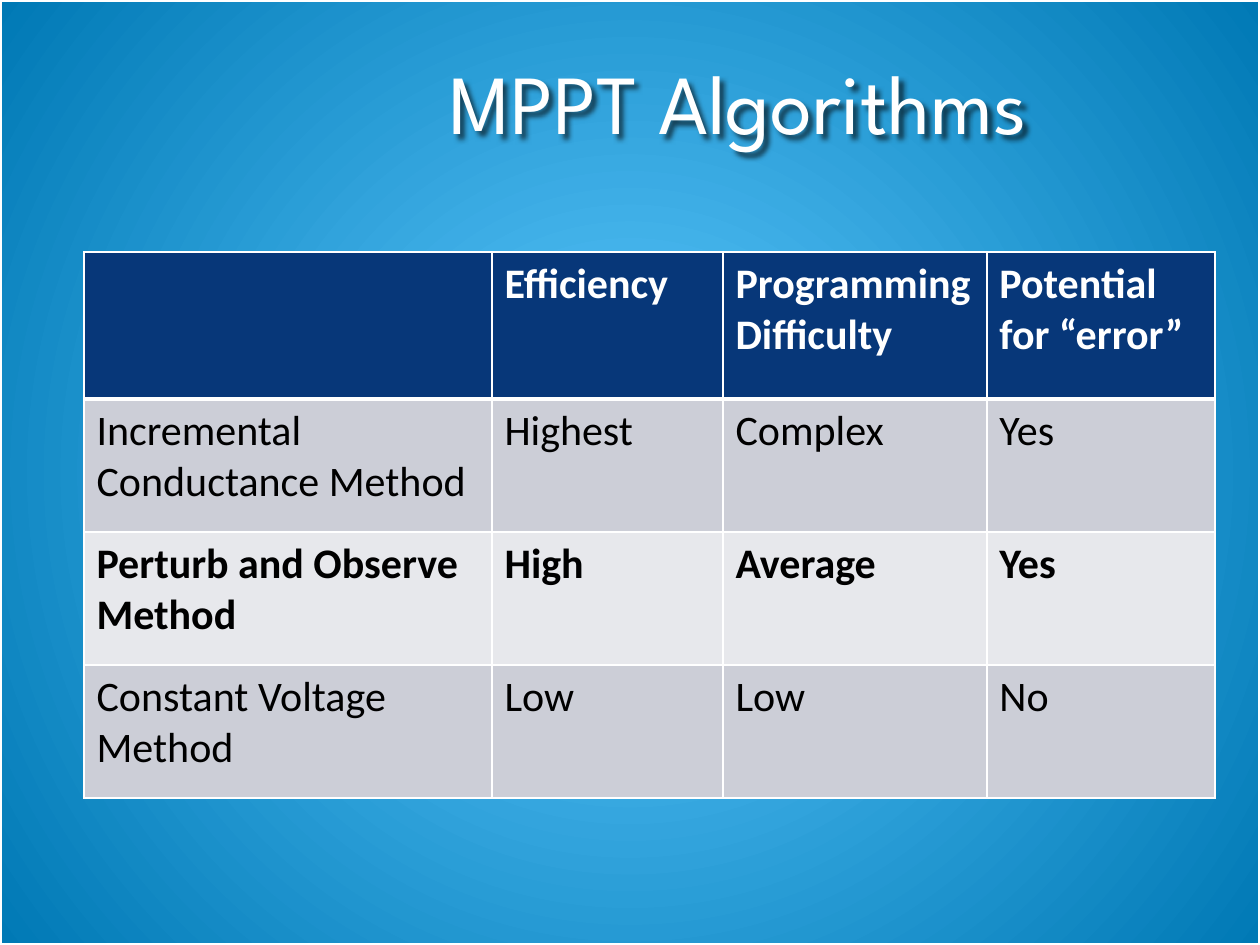
from lxml import etree
from pptx import Presentation
from pptx.dml.color import RGBColor
from pptx.enum.shapes import MSO_SHAPE
from pptx.enum.text import MSO_ANCHOR, MSO_AUTO_SIZE, PP_ALIGN
from pptx.oxml import parse_xml
from pptx.oxml.ns import nsdecls, qn
from pptx.util import Pt

PX = 914400 // 126
WIDTH, HEIGHT = 1260, 945

WHITE = RGBColor(0xFF, 0xFF, 0xFF)
BLACK = RGBColor(0x00, 0x00, 0x00)
SKY = RGBColor(0x5D, 0xC9, 0xFF)
OCEAN = RGBColor(0x00, 0x79, 0xB5)
NAVY = RGBColor(0x07, 0x37, 0x79)
GRAY = RGBColor(0xCC, 0xCE, 0xD7)
PALE = RGBColor(0xE7, 0xE8, 0xEC)

COL_WIDTHS = [408, 231, 264, 228]
ROW_HEIGHTS = [147, 133, 133, 133]
ROWS = [
    ["", "Efficiency", "Programming Difficulty", "Potential for “error”"],
    ["Incremental Conductance Method", "Highest", "Complex", "Yes"],
    ["Perturb and Observe Method", "High", "Average", "Yes"],
    ["Constant Voltage Method", "Low", "Low", "No"],
]
ROW_STYLES = [
    (NAVY, WHITE, True),
    (GRAY, BLACK, False),
    (PALE, BLACK, True),
    (GRAY, BLACK, False),
]


def px(*values):
    return [v * PX for v in values]


def write(tf, text, *, font="Calibri", size=24, color=BLACK, bold=False,
          align=PP_ALIGN.LEFT):
    tf.word_wrap = True
    p = tf.paragraphs[0]
    p.alignment = align
    r = p.add_run()
    r.text = text
    r.font.name = font
    r.font.size = Pt(size)
    r.font.bold = bold
    r.font.color.rgb = color


def set_background(slide):
    fill = slide.background.fill
    fill.gradient()
    for stop, color in zip(fill.gradient_stops, (SKY, OCEAN)):
        stop.color.rgb = color
    lin = next(slide.background._cSld.iter(qn("a:lin")))
    lin.getparent().replace(lin, parse_xml(
        f'<a:path {nsdecls("a")} path="circle">'
        '<a:fillToRect l="50000" t="50000" r="50000" b="50000"/></a:path>'))


def add_frame(slide):
    sp = slide.shapes.add_shape(MSO_SHAPE.RECTANGLE, *px(0, 0, WIDTH, HEIGHT))
    sp.shadow.inherit = False
    sp.fill.background()
    sp.line.color.rgb = WHITE
    sp.line.width = Pt(2)
    slide.shapes._spTree.insert(2, sp._element)


def set_title(slide, text):
    sp = slide.shapes.title
    sp.left, sp.top, sp.width, sp.height = px(283, 43, 911, 115)
    tf = sp.text_frame
    tf.auto_size = MSO_AUTO_SIZE.NONE
    tf.vertical_anchor = MSO_ANCHOR.BOTTOM
    write(tf, text, font="League Spartan", size=48, color=WHITE,
          align=PP_ALIGN.CENTER)
    sp._element.spPr.append(parse_xml(
        f'<a:effectLst {nsdecls("a")}>'
        '<a:outerShdw blurRad="38100" dist="38100" dir="2700000">'
        '<a:srgbClr val="000000"><a:alpha val="60000"/></a:srgbClr>'
        '</a:outerShdw></a:effectLst>'))


def set_borders(cell, top, bottom):
    tcPr = cell._tc.get_or_add_tcPr()
    for side, width in (("L", 1), ("R", 1), ("T", top), ("B", bottom)):
        ln = etree.SubElement(tcPr, qn(f"a:ln{side}"), w=str(Pt(width)))
        fill = etree.SubElement(ln, qn("a:solidFill"))
        etree.SubElement(fill, qn("a:srgbClr"), val=str(WHITE))


def add_table(slide):
    table = slide.shapes.add_table(
        len(ROWS), len(COL_WIDTHS),
        *px(84, 252, sum(COL_WIDTHS), sum(ROW_HEIGHTS))).table
    for col, width in zip(table.columns, COL_WIDTHS):
        col.width = width * PX
    for i, (texts, (fill, color, bold)) in enumerate(zip(ROWS, ROW_STYLES)):
        table.rows[i].height = ROW_HEIGHTS[i] * PX
        for cell, text in zip(table.rows[i].cells, texts):
            set_borders(cell, top=3 if i == 1 else 1, bottom=3 if i == 0 else 1)
            cell.fill.solid()
            cell.fill.fore_color.rgb = fill
            if text:
                write(cell.text_frame, text, color=color, bold=bold)


def main():
    prs = Presentation()
    prs.slide_width, prs.slide_height = px(WIDTH, HEIGHT)
    slide = prs.slides.add_slide(prs.slide_layouts[5])
    set_background(slide)
    add_frame(slide)
    set_title(slide, "MPPT Algorithms")
    add_table(slide)
    prs.save("out.pptx")


if __name__ == "__main__":
    main()
